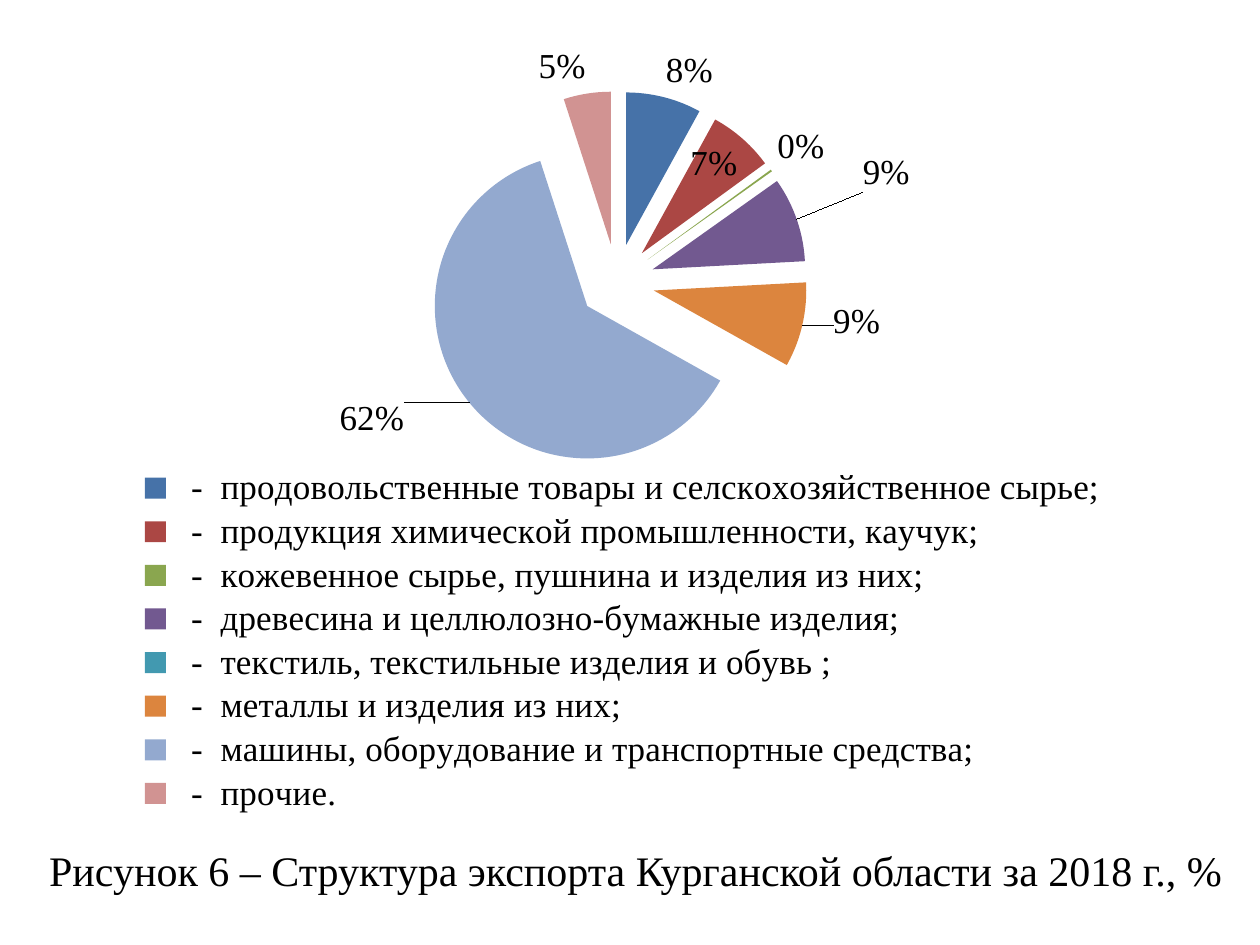
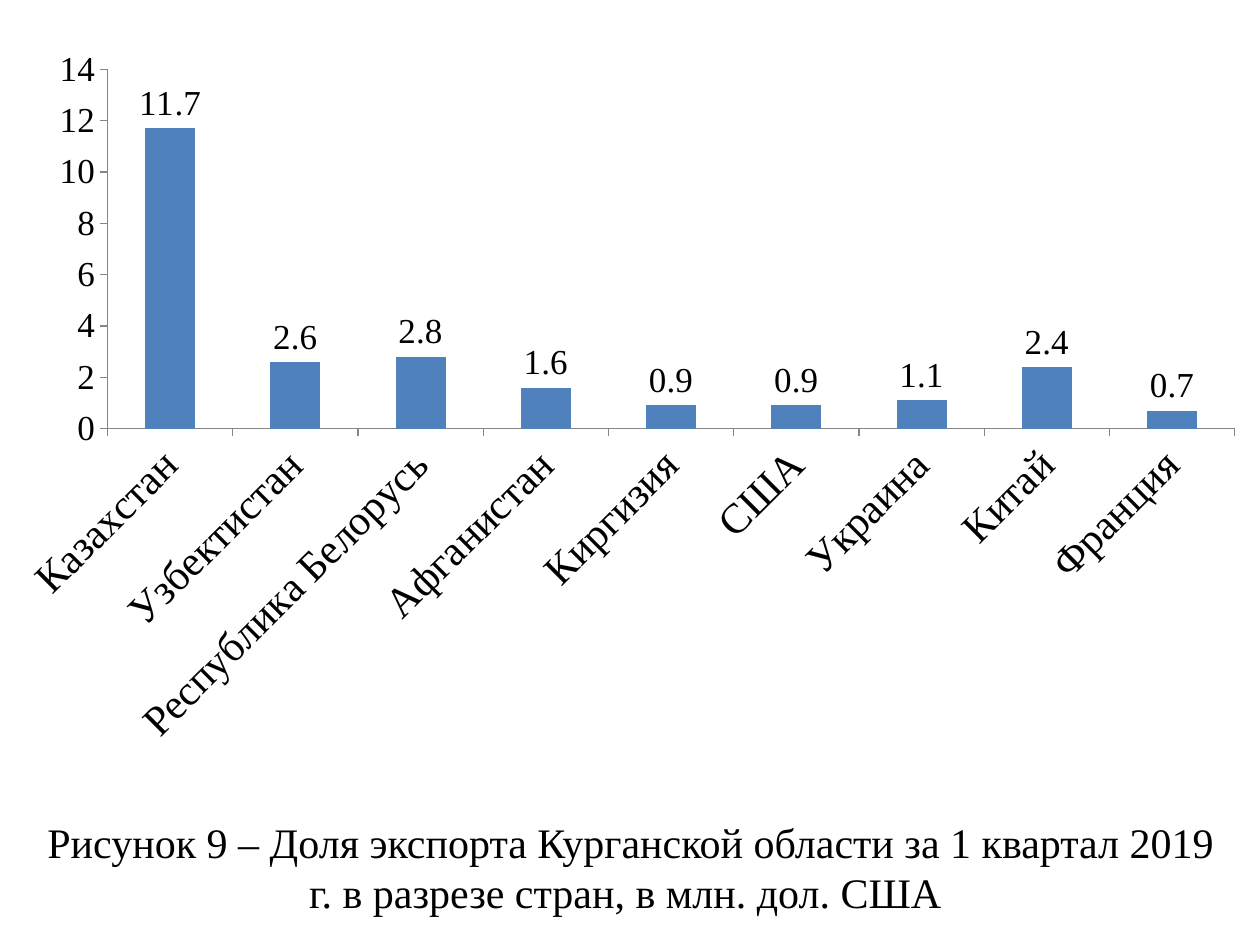
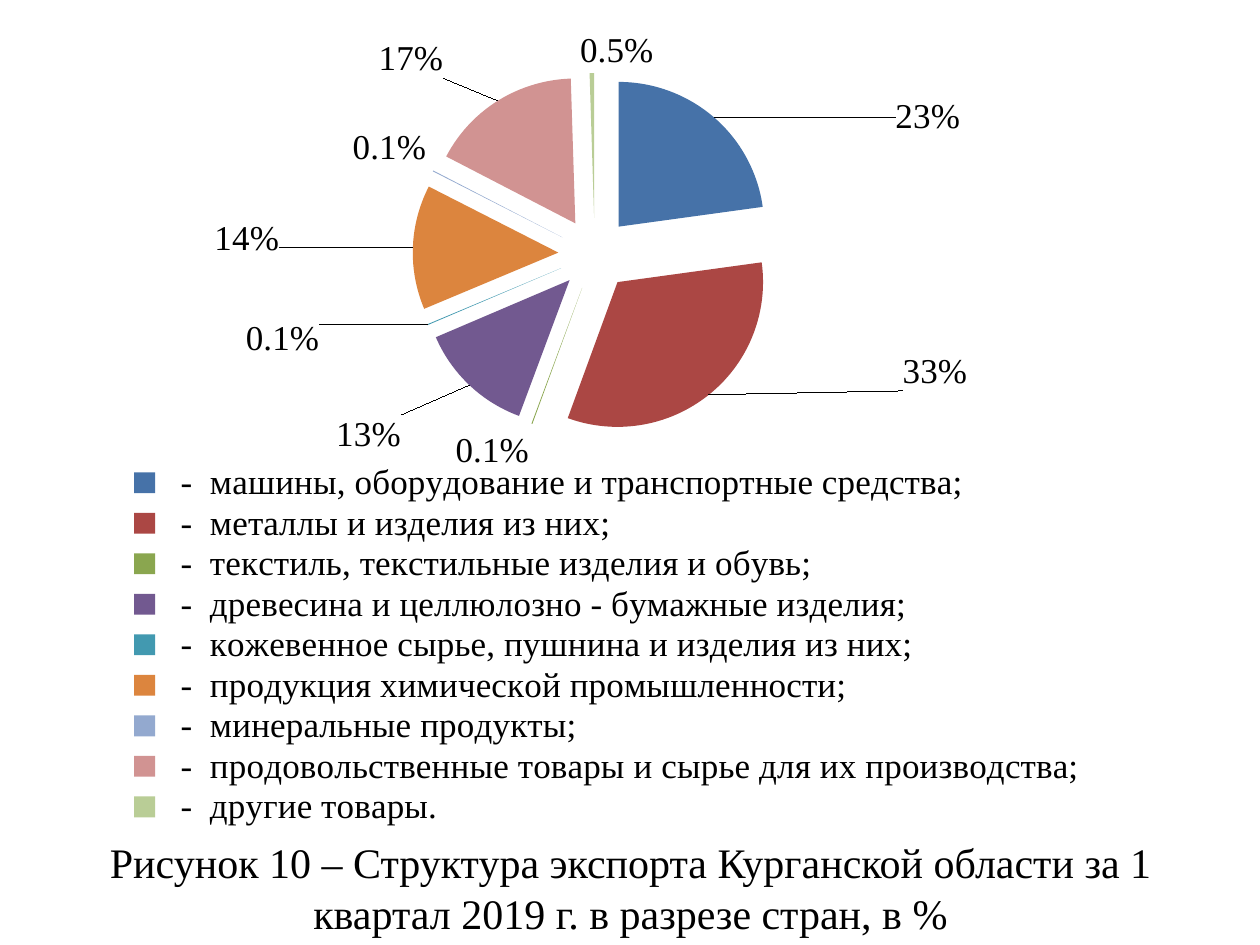
from dataclasses import dataclass, field

from pptx import Presentation
from pptx.chart.chart import Chart
from pptx.chart.data import CategoryChartData
from pptx.dml.color import RGBColor
from pptx.enum.chart import (XL_CHART_TYPE, XL_LABEL_POSITION,
                             XL_LEGEND_POSITION, XL_TICK_MARK)
from pptx.enum.text import MSO_ANCHOR, MSO_AUTO_SIZE, PP_ALIGN
from pptx.oxml import parse_xml
from pptx.oxml.ns import nsdecls, qn
from pptx.slide import Slide
from pptx.util import Inches, Pt

FONT = "Times New Roman"
BLACK = RGBColor(0x00, 0x00, 0x00)
GRAY = RGBColor(0x86, 0x86, 0x86)
BLUE = RGBColor(0x4F, 0x81, 0xBD)
SLICES = [
    RGBColor(0x46, 0x72, 0xA8), RGBColor(0xAB, 0x47, 0x44),
    RGBColor(0x8A, 0xA6, 0x4F), RGBColor(0x72, 0x59, 0x90),
    RGBColor(0x42, 0x99, 0xB0), RGBColor(0xDC, 0x85, 0x3E),
    RGBColor(0x93, 0xA9, 0xCF), RGBColor(0xD1, 0x93, 0x92),
    RGBColor(0xB9, 0xCD, 0x96),
]
DASH = "  -  "
SERIES = "Series 1"

Box = tuple[float, float, float, float]


@dataclass
class Label:
    """Placing of one slice label; shift is a share of the chart size."""
    shift: tuple[float, float] = (0, 0)
    pos: str = "outEnd"
    fmt: str = "0%"


@dataclass
class Figure:
    box: Box
    caption: str
    place: Box
    data: dict[str, float]


@dataclass
class Pie(Figure):
    plot: Box
    legend: Box
    percent: bool
    labels: dict[int, Label]
    blank: list[int] = field(default_factory=list)


EXPORT = Pie(
    box=(0.2, 0.36, 9.39, 6.52),
    caption="Рисунок 6 – Структура экспорта Курганской области за 2018 г., %",
    place=(0.28, 6.65, 9.53, 0.5),
    data={
        "продовольственные товары и селскохозяйственное сырье;": 0.08,
        "продукция химической промышленности, каучук;": 0.07,
        "кожевенное сырье, пушнина и изделия из них;": 0.002,
        "древесина и целлюлозно-бумажные изделия;": 0.09,
        "текстиль, текстильные изделия и обувь ;": 0,
        "металлы и изделия из них;": 0.09,
        "машины, оборудование и транспортные средства;": 0.62,
        "прочие.": 0.05,
    },
    plot=(0.036, 0.056, 0.928, 0.464),
    legend=(0.09, 0.51, 0.83, 0.43),
    percent=False,
    labels={1: Label(pos="inEnd"), 3: Label((0.05, -0.03)),
            5: Label((0.02, -0.03)), 6: Label((-0.05, -0.01))},
    blank=[4],
)

LANDS = Figure(
    box=(0, 0.28, 10, 5.75),
    caption="Рисунок 9 – Доля экспорта Курганской области за 1 квартал 2019 г. "
            "в разрезе стран, в млн. дол. США ",
    place=(0.22, 6.43, 9.57, 0.91),
    data={"Казахстан": 11.7, "Узбектистан": 2.6, "Республика Белорусь": 2.8,
          "Афганистан": 1.6, "Киргизия": 0.9, "США": 0.9, "Украина": 1.1,
          "Китай": 2.4, "Франция": 0.7},
)

QUARTER = Pie(
    box=(-0.28, 0.21, 10, 6.49),
    caption="Рисунок 10 – Структура экспорта Курганской области за 1 квартал "
            "2019 г. в разрезе стран, в %",
    place=(0.22, 6.59, 9.57, 0.91),
    data={
        "машины, оборудование и транспортные средства;": 23,
        "металлы и изделия из них;": 33,
        "текстиль, текстильные изделия и обувь;": 0.1,
        "древесина и целлюлозно - бумажные изделия;": 13,
        "кожевенное сырье, пушнина и изделия из них;": 0.1,
        "продукция химической промышленности;": 14,
        "минеральные продукты;": 0.1,
        "продовольственные товары и сырье для их производства;": 17,
        "другие товары.": 0.5,
    },
    plot=(0, 0.052, 1, 0.445),
    legend=(0.12, 0.53, 0.78, 0.45),
    percent=True,
    labels={0: Label((0.14, 0.03)), 1: Label((0.15, -0.06)),
            2: Label(fmt="0.0%"), 3: Label((-0.05, 0.03)),
            4: Label((-0.08, -0.01), fmt="0.0%"), 5: Label((-0.1, -0.01)),
            6: Label(fmt="0.0%"), 7: Label((-0.04, -0.02)),
            8: Label((0.02, 0), fmt="0.0%")},
)


def add_chart(slide: Slide, kind: XL_CHART_TYPE, fig: Figure,
              lead: str = "") -> Chart:
    data = CategoryChartData()
    data.categories = [lead + name for name in fig.data]
    data.add_series(SERIES, list(fig.data.values()))
    box = [Inches(n) for n in fig.box]
    chart = slide.shapes.add_chart(kind, *box, data).chart
    chart.has_title = False
    chart.has_legend = False
    chart.font.name = FONT
    chart.font.size = Pt(20)
    chart.font.color.rgb = BLACK
    return chart


def add_caption(slide: Slide, fig: Figure) -> None:
    title = slide.shapes.title
    title.left, title.top, title.width, title.height = map(Inches, fig.place)
    frame = title.text_frame
    frame.word_wrap = True
    frame.auto_size = MSO_AUTO_SIZE.SHAPE_TO_FIT_TEXT
    frame.vertical_anchor = MSO_ANCHOR.TOP
    para = frame.paragraphs[0]
    para.alignment = PP_ALIGN.CENTER
    run = para.add_run()
    run.text = fig.caption
    run.font.name = FONT
    run.font.size = Pt(24)
    run.font.color.rgb = BLACK


def layout(box: Box, inner: bool = False):
    target = '<c:layoutTarget val="inner"/>' if inner else ""
    modes = "".join(f'<c:{side}Mode val="edge"/>' for side in "xy")
    sizes = "".join(f'<c:{key} val="{n}"/>' for key, n in zip("xywh", box))
    return parse_xml(f'<c:layout {nsdecls("c")}><c:manualLayout>{target}{modes}'
                     f'{sizes}</c:manualLayout></c:layout>')


def set_layout(parent, after: str, box: Box, inner: bool = False) -> None:
    """Put a layout in parent, after the named child if there is one."""
    old = parent.find(qn("c:layout"))
    if old is not None:
        parent.remove(old)
    child = parent.find(qn(after)) if after else None
    if child is None:
        parent.insert(0, layout(box, inner))
    else:
        child.addnext(layout(box, inner))


def slice_label(index: int, label: Label, percent: bool):
    x, y = label.shift
    move = ""
    if x or y:
        move = (f'<c:layout><c:manualLayout><c:x val="{x}"/><c:y val="{y}"/>'
                '</c:manualLayout></c:layout>')
    shown = "showPercent" if percent else "showVal"
    flags = "".join(
        f'<c:{flag} val="{int(flag == shown)}"/>'
        for flag in ("showLegendKey", "showVal", "showCatName",
                     "showSerName", "showPercent", "showBubbleSize"))
    return parse_xml(
        f'<c:dLbl {nsdecls("c")}><c:idx val="{index}"/>{move}'
        f'<c:numFmt formatCode="{label.fmt}" sourceLinked="0"/>'
        f'<c:dLblPos val="{label.pos}"/>{flags}</c:dLbl>')


def hidden_label(index: int):
    return parse_xml(f'<c:dLbl {nsdecls("c")}><c:idx val="{index}"/>'
                     '<c:delete val="1"/></c:dLbl>')


def add_labels(series, pie: Pie) -> None:
    labels = series.data_labels
    labels.show_value = not pie.percent
    labels.show_percentage = pie.percent
    labels.number_format = "0%"
    labels.number_format_is_linked = False
    labels.position = XL_LABEL_POSITION.OUTSIDE_END
    node = series._element.find(qn("c:dLbls"))
    for spot, index in enumerate(sorted([*pie.labels, *pie.blank])):
        if index in pie.blank:
            item = hidden_label(index)
        else:
            item = slice_label(index, pie.labels[index], pie.percent)
        node.insert(spot, item)


def add_pie(slide: Slide, pie: Pie) -> None:
    chart = add_chart(slide, XL_CHART_TYPE.PIE, pie, DASH)
    plot = chart.plots[0]
    plot.vary_by_categories = True
    series = plot.series[0]
    series._element.find(qn("c:tx")).addnext(
        parse_xml(f'<c:explosion {nsdecls("c")} val="25"/>'))
    for index, color in enumerate(SLICES[:len(pie.data)]):
        fill = series.points[index].format.fill
        fill.solid()
        fill.fore_color.rgb = color
    add_labels(series, pie)
    chart.has_legend = True
    legend = chart.legend
    legend.position = XL_LEGEND_POSITION.BOTTOM
    legend.include_in_layout = False
    set_layout(legend._element, "c:legendPos", pie.legend)
    area = chart._chartSpace.find(".//" + qn("c:plotArea"))
    set_layout(area, "", pie.plot, inner=True)


def add_bars(slide: Slide, fig: Figure) -> None:
    chart = add_chart(slide, XL_CHART_TYPE.COLUMN_CLUSTERED, fig)
    plot = chart.plots[0]
    plot.gap_width = 150
    plot.vary_by_categories = False
    series = plot.series[0]
    series.format.fill.solid()
    series.format.fill.fore_color.rgb = BLUE
    labels = series.data_labels
    labels.show_value = True
    labels.position = XL_LABEL_POSITION.OUTSIDE_END
    for axis, size in ((chart.category_axis, 24), (chart.value_axis, 20)):
        axis.has_major_gridlines = False
        axis.major_tick_mark = XL_TICK_MARK.OUTSIDE
        axis.minor_tick_mark = XL_TICK_MARK.NONE
        axis.format.line.color.rgb = GRAY
        font = axis.tick_labels.font
        font.name = FONT
        font.size = Pt(size)
        font.color.rgb = BLACK
    names = chart.category_axis._element.find(qn("c:txPr"))
    names.find(qn("a:bodyPr")).set("rot", "-2700000")


def main() -> None:
    deck = Presentation()
    deck.slide_width = Inches(10)
    deck.slide_height = Inches(7.5)
    for fig in (EXPORT, LANDS, QUARTER):
        slide = deck.slides.add_slide(deck.slide_layouts[5])
        if isinstance(fig, Pie):
            add_pie(slide, fig)
        else:
            add_bars(slide, fig)
        add_caption(slide, fig)
    deck.save("out.pptx")


if __name__ == "__main__":
    main()
